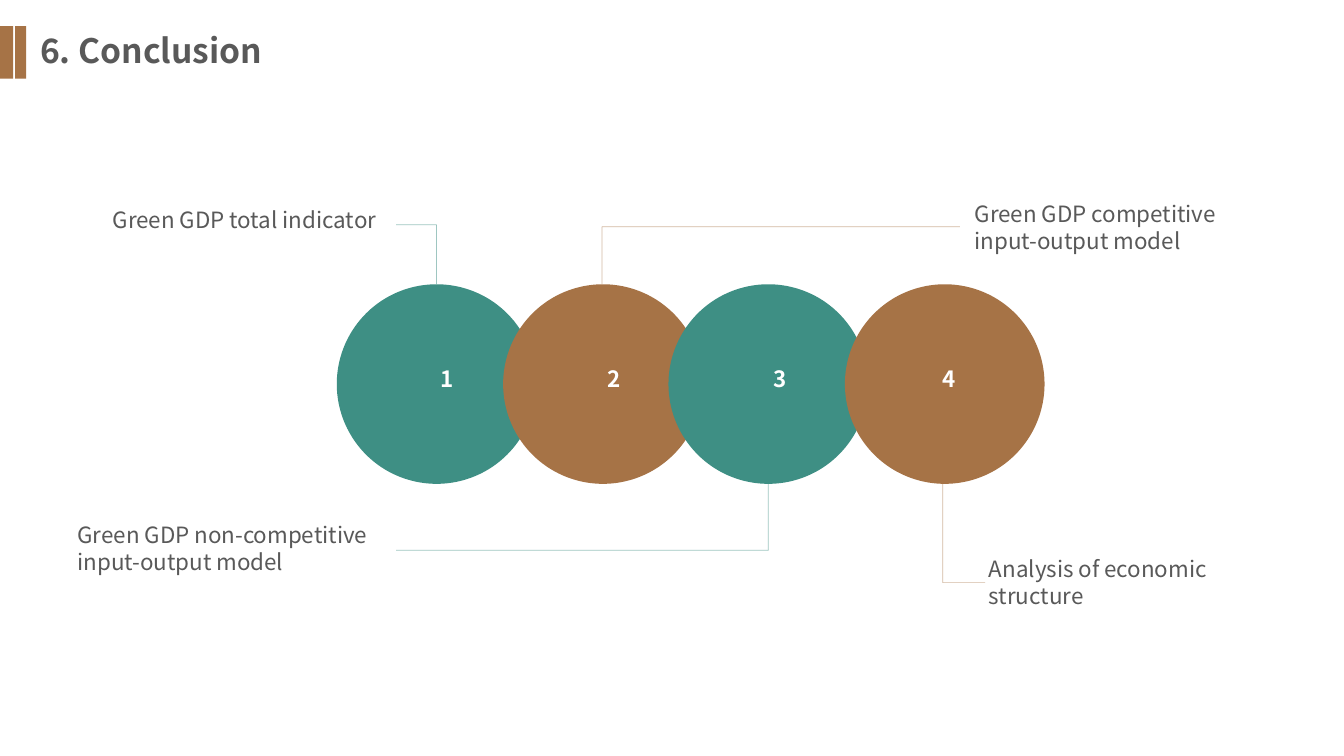
from lxml.etree import SubElement
from pptx import Presentation
from pptx.dml.color import RGBColor
from pptx.enum.shapes import MSO_CONNECTOR as CONN, MSO_SHAPE as SHAPE
from pptx.enum.text import PP_ALIGN as ALIGN
from pptx.oxml.ns import qn
from pptx.util import Inches, Pt

COLORS = {"teal": "3E8F84", "brown": "A67346", "text": "595959", "white": "FFFFFF"}
FONT = "Noto Sans CJK SC"
DIAMETER = 1.98

STEPS = [
    ("1", "teal", 3.34, 3.79),
    ("2", "brown", 4.99, 5.45),
    ("3", "teal", 6.63, 7.1),
    ("4", "brown", 8.38, 8.77),
]
LEADERS = [
    ("teal", 4.33, 2.82, 2.23, 3.93),
    ("brown", 5.97, 2.82, 2.25, 9.52),
    ("teal", 7.62, 4.8, 5.46, 3.93),
    ("brown", 9.35, 4.8, 5.78, 9.77),
]
LABELS = [
    ("Green GDP total indicator", (1.02, 1.94, 3.03, 0.56), 1.2),
    ("Green GDP competitive input-output model", (9.57, 1.94, 2.8, 0.8), None),
    ("Green GDP non-competitive input-output model", (0.67, 5.12, 3.22, 0.96), None),
    ("Analysis of economic structure", (9.71, 5.46, 2.91, 0.68), None),
]


def rgb(name):
    return RGBColor.from_string(COLORS[name])


def write(sp, text, size=16, color="text", bold=False, align=ALIGN.LEFT, spacing=None):
    tf = sp.text_frame
    tf.word_wrap = True
    p = tf.paragraphs[0]
    p.alignment = align
    p.line_spacing = spacing
    r = p.add_run()
    r.text = text
    r.font.name = FONT
    r.font.size = Pt(size)
    r.font.bold = bold
    r.font.color.rgb = rgb(color)


def add_label(s, text, box, **fmt):
    sp = s.shapes.add_textbox(*map(Inches, box))
    write(sp, text, **fmt)


def add_block(shapes, kind, box, color):
    sp = shapes.add_shape(kind, *map(Inches, box))
    sp.shadow.inherit = False
    sp.fill.solid()
    sp.fill.fore_color.rgb = rgb(color)
    sp.line.fill.background()
    return sp


def add_line(s, start, end, color):
    line = s.shapes.add_connector(CONN.STRAIGHT, *map(Inches, start + end))
    line.line.width = Pt(0.5)
    line.line.color.rgb = rgb(color)
    clr = line.line.fill._xPr.find(".//" + qn("a:srgbClr"))
    SubElement(clr, qn("a:alpha")).set("val", "50000")
    SubElement(line._element.spPr, qn("a:effectLst"))


def add_header(s, left, top, width, height):
    add_label(s, "6. Conclusion", (left + 0.3, top, width, height), size=24, bold=True)
    for offset, bar in ((0, 0.13), (0.15, 0.11)):
        add_block(s.shapes, SHAPE.RECTANGLE, (left + offset, top + 0.01, bar, 0.52), "brown")


def add_leader(s, color, x, y, bend, end):
    add_line(s, (x, y), (x, bend), color)
    add_line(s, (x, bend), (end, bend), color)


def add_step(s, number, color, left, number_left, top):
    group = s.shapes.add_group_shape()
    add_block(group.shapes, SHAPE.OVAL, (left, top, DIAMETER, DIAMETER), color)
    sp = add_block(group.shapes, SHAPE.RECTANGLE, (number_left, top + 0.75, 1.28, 0.59), color)
    sp.text_frame.vertical_anchor = 1
    write(sp, number, color="white", bold=True, align=ALIGN.CENTER)


def main():
    prs = Presentation()
    prs.slide_width, prs.slide_height = Inches(13.33), Inches(7.5)
    s = prs.slides.add_slide(prs.slide_layouts[6])
    add_header(s, 0, 0.25, 3.3, 0.5)
    for leader in LEADERS:
        add_leader(s, *leader)
    for step in STEPS:
        add_step(s, *step, top=2.82)
    for text, box, spacing in LABELS:
        add_label(s, text, box, spacing=spacing)
    prs.save("out.pptx")


if __name__ == "__main__":
    main()
